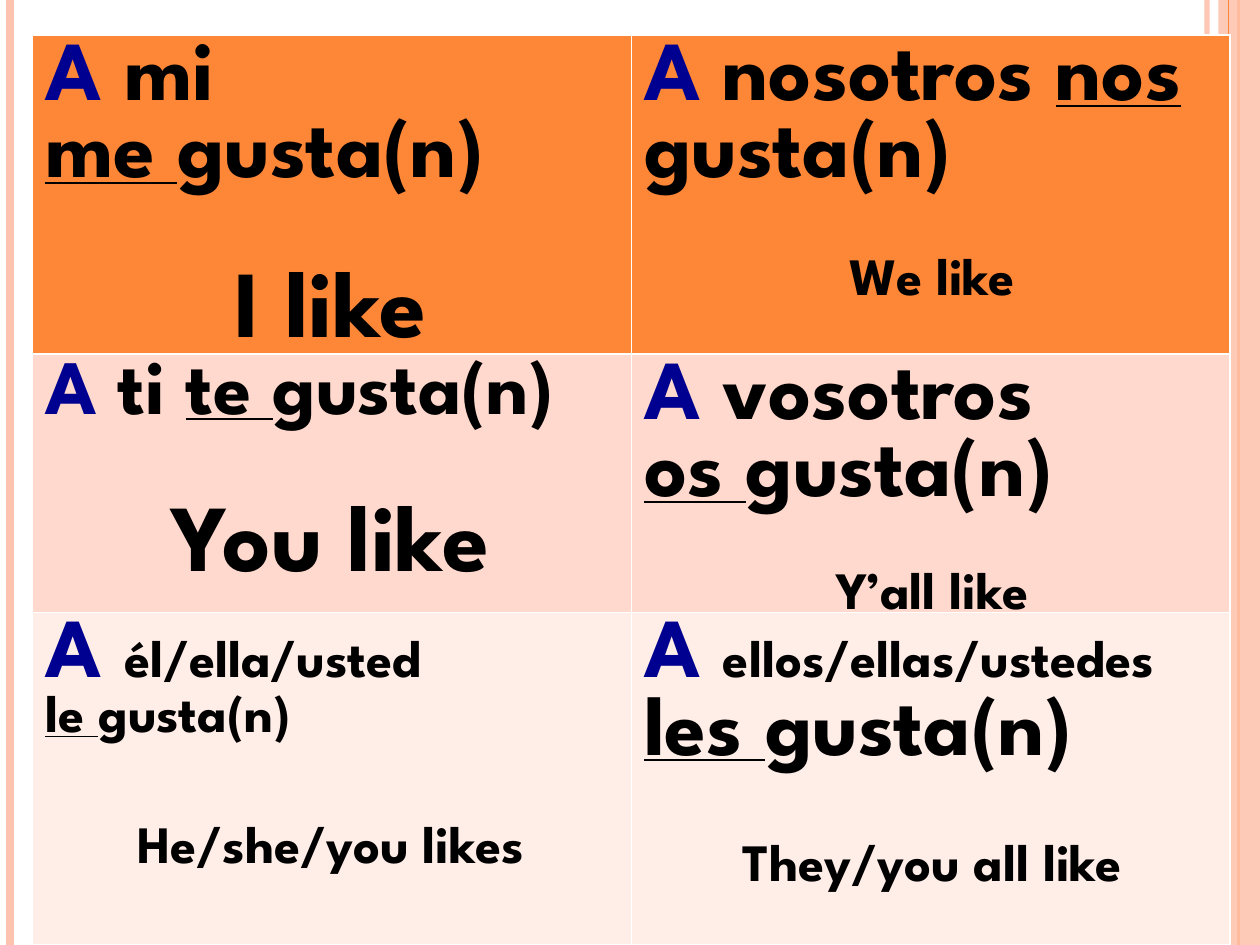
"""Build a slide with a table of gustar forms and their English meanings."""
from lxml import etree
from pptx import Presentation
from pptx import util as u
from pptx.dml.color import RGBColor
from pptx.enum import shapes, text
from pptx.oxml.ns import qn

THEME = {
    "font": "League Spartan",
    "navy": "000090", "black": "000000", "white": "FFFFFF",
    "orange": "FE8637", "peach": "FEC3AE",
    "rows": ("FE8637", "FFD9CE", "FFEDE8"),
    "small": 30, "medium": 44, "large": 48, "huge": 54,
}

# Each span: words, size, style
CELLS = [
    [
        [[("A", "large", "navy"), (" mi", "large", "plain")],
         [("me ", "large", "under"), ("gusta(n)", "large", "plain")]],
        [[("A ", "large", "navy"), ("nosotros ", "large", "plain"),
          ("nos ", "large", "under"), ("gusta(n)", "large", "plain")]],
    ],
    [
        [[("A ", "medium", "navy"), ("ti ", "medium", "plain"),
          ("te ", "medium", "under"), ("gusta(n)", "medium", "plain")]],
        [[("A ", "large", "navy"), ("vosotros", "large", "plain")],
         [("os ", "large", "under"), ("gusta(n)", "large", "plain")]],
    ],
    [
        [[("A ", "large", "navy"), ("él/ella/usted", "small", "plain")],
         [("le ", "small", "under"), ("gusta(n)", "small", "plain")]],
        [[("A ", "large", "navy"), ("ellos/ellas/ustedes", "small", "plain")],
         [("les ", "large", "under"), ("gusta(n)", "large", "plain")]],
    ],
]
# Each meaning: words, column, top, size
MEANINGS = [
    ("I like", 0, 4.78, "huge"),
    ("You like", 0, 9.5, "huge"),
    ("He/she/you likes", 0, 16.23, "small"),
    ("We like", 1, 4.78, "small"),
    ("Y’all like", 1, 11.1, "small"),
    ("They/you all like", 1, 16.59, "small"),
]
# Each stripe: x, colour, points, opacity
BACK_STRIPES = [(24.33, "peach", 3, 93), (0.2, "peach", 4.5, 100), (24.97, "orange", 1.5, 100)]
FRONT_STRIPES = [(24.77, "orange", 0.75, 100)]
BAND_LEFT, BAND_OPACITY = 24.56, 87
PAGE_WIDTH, PAGE_HEIGHT = 25.4, 19.05
TABLE_LEFT, TABLE_TOP, COLUMN_WIDTH = 0.66, 0.71, 12.07
ROW_HEIGHTS = (6.43, 5.21, 6.7)
MEANING_WIDTH = 12.01


def colour(name):
    return RGBColor.from_string(THEME.get(name, name))


def set_opacity(element, percent):
    if percent < 100:
        tone = element.find(".//" + qn("a:srgbClr"))
        etree.SubElement(tone, qn("a:alpha"), val=str(percent * 1000))


def add_stripes(page, stripes):
    for x, tone, points, opacity in stripes:
        stripe = page.shapes.add_connector(
            shapes.MSO_CONNECTOR.STRAIGHT, u.Cm(x), 0, u.Cm(x), u.Cm(PAGE_HEIGHT))
        stripe.line.color.rgb = colour(tone)
        stripe.line.width = u.Pt(points)
        properties = stripe._element.spPr
        set_opacity(properties, opacity)
        etree.SubElement(properties, qn("a:effectLst"))


def add_band(page):
    band = page.shapes.add_shape(
        shapes.MSO_SHAPE.RECTANGLE, u.Cm(BAND_LEFT), 0,
        u.Cm(PAGE_WIDTH - BAND_LEFT), u.Cm(PAGE_HEIGHT))
    band.shadow.inherit = False
    band.fill.solid()
    band.fill.fore_color.rgb = colour("peach")
    band.line.fill.background()
    set_opacity(band._element.spPr, BAND_OPACITY)


def add_span(para, words, size, style="plain"):
    span = para.add_run()
    span.text = words
    span.font.name = THEME["font"]
    span.font.size = u.Pt(THEME[size])
    span.font.bold = True
    span.font.underline = style == "under"
    span.font.color.rgb = colour("navy" if style == "navy" else "black")


def add_borders(cell):
    properties = cell._tc.get_or_add_tcPr()
    for position, side in enumerate(("lnL", "lnR", "lnT", "lnB")):
        border = etree.Element(qn("a:" + side), w=str(u.Pt(1)))
        fill = etree.SubElement(border, qn("a:solidFill"))
        etree.SubElement(fill, qn("a:srgbClr"), val=THEME["white"])
        properties.insert(position, border)


def fill_cell(cell, paragraphs, tone):
    cell.fill.solid()
    cell.fill.fore_color.rgb = colour(tone)
    add_borders(cell)
    for index, spans in enumerate(paragraphs):
        frame = cell.text_frame
        para = frame.add_paragraph() if index else frame.paragraphs[0]
        for span in spans:
            add_span(para, *span)


def add_forms(page):
    table = page.shapes.add_table(
        len(CELLS), len(CELLS[0]), u.Cm(TABLE_LEFT), u.Cm(TABLE_TOP),
        u.Cm(2 * COLUMN_WIDTH), u.Cm(sum(ROW_HEIGHTS))).table
    for column in table.columns:
        column.width = u.Cm(COLUMN_WIDTH)
    for row, (height, tone) in enumerate(zip(ROW_HEIGHTS, THEME["rows"])):
        table.rows[row].height = u.Cm(height)
        for column, paragraphs in enumerate(CELLS[row]):
            fill_cell(table.cell(row, column), paragraphs, tone)


def add_meanings(page):
    for words, column, top, size in MEANINGS:
        left = TABLE_LEFT + column * (2 * COLUMN_WIDTH - MEANING_WIDTH)
        height = 2.57 if size == "huge" else 1.55
        box = page.shapes.add_textbox(
            u.Cm(left), u.Cm(top), u.Cm(MEANING_WIDTH), u.Cm(height))
        box.text_frame.word_wrap = True
        box.text_frame.auto_size = text.MSO_AUTO_SIZE.SHAPE_TO_FIT_TEXT
        para = box.text_frame.paragraphs[0]
        para.alignment = text.PP_ALIGN.CENTER
        add_span(para, words, size)


def main():
    deck = Presentation()
    deck.slide_width, deck.slide_height = u.Cm(PAGE_WIDTH), u.Cm(PAGE_HEIGHT)
    page = deck.slides.add_slide(deck.slide_layouts[6])
    page.background.fill.solid()
    page.background.fill.fore_color.rgb = colour("white")
    add_stripes(page, BACK_STRIPES)
    add_band(page)
    add_stripes(page, FRONT_STRIPES)
    add_forms(page)
    add_meanings(page)
    deck.save("out.pptx")


if __name__ == "__main__":
    main()
